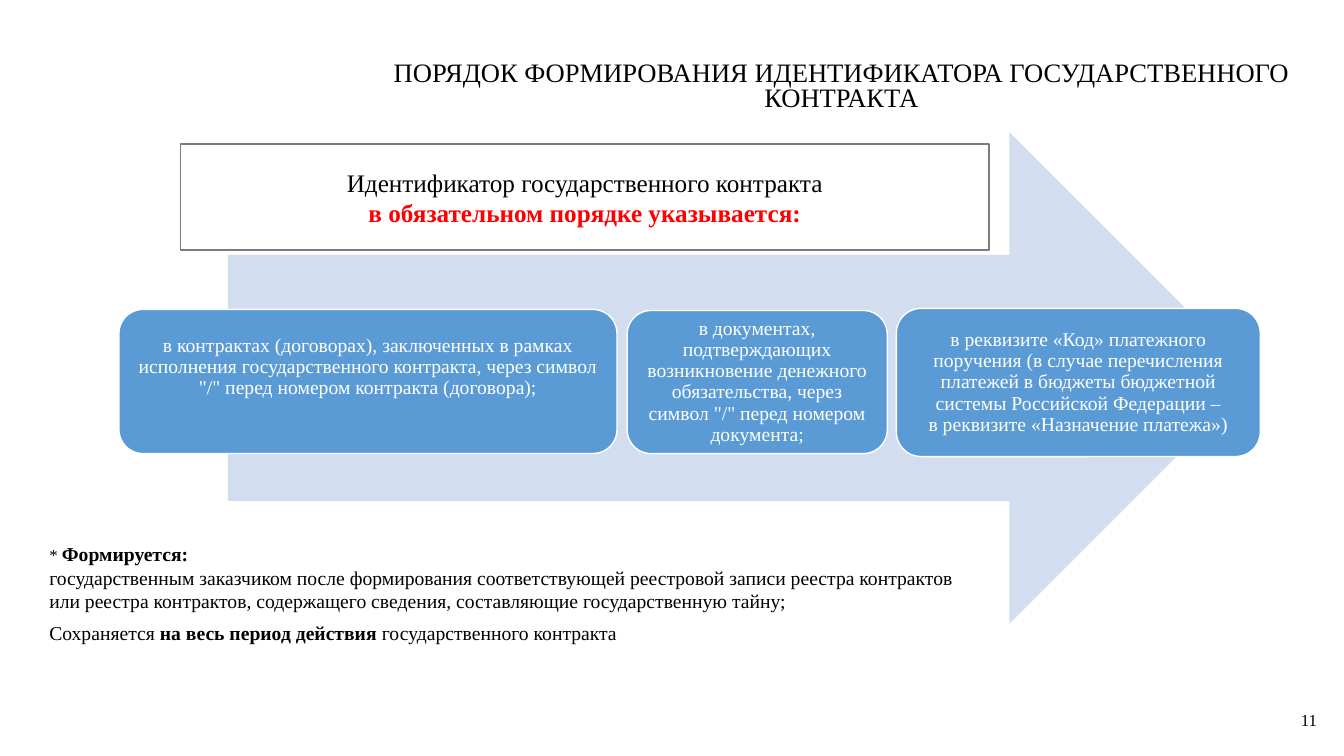
import pptx
import pptx.util
import pptx.dml.color
import pptx.enum.shapes
import pptx.enum.text
import pptx.oxml.ns
import lxml.etree
from dataclasses import dataclass

SHAPE = pptx.enum.shapes.MSO_SHAPE
ALIGN = pptx.enum.text.PP_ALIGN
ANCHOR = pptx.enum.text.MSO_ANCHOR


@dataclass(frozen=True)
class Theme:
    font: str = "Times New Roman"
    ink: str = "000000"
    paper: str = "FFFFFF"
    alert: str = "FF0000"
    card: str = "5B9BD5"
    arrow: str = "D2DEEF"
    frame: str = "7C7C7C"
    title: int = 19
    lead: int = 18
    body: int = 14
    small: int = 12


class Deck:
    scale = 9144

    def __init__(self, theme, width, height):
        self.theme = theme
        self.file = pptx.Presentation()
        self.file.slide_width = self.px(width)
        self.file.slide_height = self.px(height)
        self.slide = self.file.slides.add_slide(self.file.slide_layouts[6])

    def px(self, size):
        return pptx.util.Emu(size * self.scale)

    def color(self, name):
        return pptx.dml.color.RGBColor.from_string(name)

    def shape(self, kind, box, fill, line=None):
        shape = self.slide.shapes.add_shape(kind, *map(self.px, box))
        shape.shadow.inherit = False
        shape.fill.solid()
        shape.fill.fore_color.rgb = self.color(fill)
        if line:
            shape.line.color.rgb = self.color(line)
            shape.line.width = pptx.util.Pt(1)
        else:
            shape.line.fill.background()
        return shape

    def label(self, shape, paras, align, anchor=ANCHOR.TOP, pads=(10, 5, 10, 5)):
        frame = shape.text_frame
        frame.word_wrap = True
        frame.vertical_anchor = anchor
        (frame.margin_left, frame.margin_top,
         frame.margin_right, frame.margin_bottom) = map(self.px, pads)
        frame.text = "\n".join("" for _ in paras)
        for para, runs in zip(frame.paragraphs, paras):
            para.alignment = align
            for text, size, tint, bold in runs:
                run = para.add_run()
                run.text = text
                run.font.name = self.theme.font
                run.font.size = pptx.util.Pt(size)
                run.font.bold = bold
                run.font.color.rgb = self.color(tint)
        return frame.paragraphs

    def text(self, box, paras, align, anchor=ANCHOR.TOP):
        shape = self.slide.shapes.add_textbox(*map(self.px, box))
        return self.label(shape, paras, align, anchor)

    def card(self, box, lines, foot=6):
        look = self.theme
        shape = self.shape(SHAPE.ROUNDED_RECTANGLE, box, look.card, look.paper)
        runs = [(line, look.body, look.paper, False) for line in lines]
        para = self.label(shape, [runs], ALIGN.CENTER, ANCHOR.MIDDLE, (6, 6, 6, foot))[0]
        para.line_spacing = 0.9
        tag = pptx.oxml.ns.qn
        for run in para.runs[1:]:
            gap = lxml.etree.Element(tag("a:br"))
            lxml.etree.SubElement(gap, tag("a:rPr"), sz=str(look.body * 100))
            run._r.addprevious(gap)


def main():
    look = Theme()
    deck = Deck(look, 1333, 750)

    title = deck.text(
        (336, 57, 997, 61),
        [[("ПОРЯДОК ФОРМИРОВАНИЯ ИДЕНТИФИКАТОРА ГОСУДАРСТВЕННОГО КОНТРАКТА",
           look.title, look.ink, False)]],
        ALIGN.CENTER)
    title[0].line_spacing = pptx.util.Pt(18)

    deck.shape(SHAPE.RIGHT_ARROW, (226, 131, 1019, 488), look.arrow)

    deck.card((118, 307, 494, 143), [
        "в контрактах (договорах), заключенных в рамках исполнения "
        "государственного контракта, через символ \"/\" перед номером "
        "контракта (договора);"], foot=35)
    deck.card((622, 308, 258, 142), [
        "в документах, подтверждающих возникновение денежного "
        "обязательства, через символ \"/\" перед номером документа;"])
    deck.card((889, 306, 361, 147), [
        "в реквизите «Код» платежного поручения (в случае перечисления "
        "платежей в бюджеты бюджетной системы Российской Федерации –",
        "в реквизите «Назначение платежа»)"])

    head = deck.shape(SHAPE.RECTANGLE, (179, 143, 802, 105), look.paper, look.frame)
    deck.label(head, [
        [("Идентификатор государственного контракта", look.lead, look.ink, False)],
        [("в обязательном порядке указывается:", look.lead, look.alert, True)],
    ], ALIGN.CENTER, ANCHOR.MIDDLE)

    note = deck.text((39, 533, 921, 113), [
        [("* ", look.small, look.ink, False),
         ("Формируется:", look.body, look.ink, True)],
        [("государственным заказчиком после формирования соответствующей "
          "реестровой записи реестра контрактов или реестра контрактов, "
          "содержащего сведения, составляющие государственную тайну;",
          look.body, look.ink, False)],
        [("Сохраняется ", look.body, look.ink, False),
         ("на весь период действия ", look.body, look.ink, True),
         ("государственного контракта", look.body, look.ink, False)],
    ], ALIGN.LEFT)
    note[1].space_after = pptx.util.Pt(5.9)

    deck.text((1277, 694, 39, 40), [[("11", look.small, look.ink, False)]],
              ALIGN.RIGHT, ANCHOR.MIDDLE)

    deck.file.save("out.pptx")


if __name__ == "__main__":
    main()
